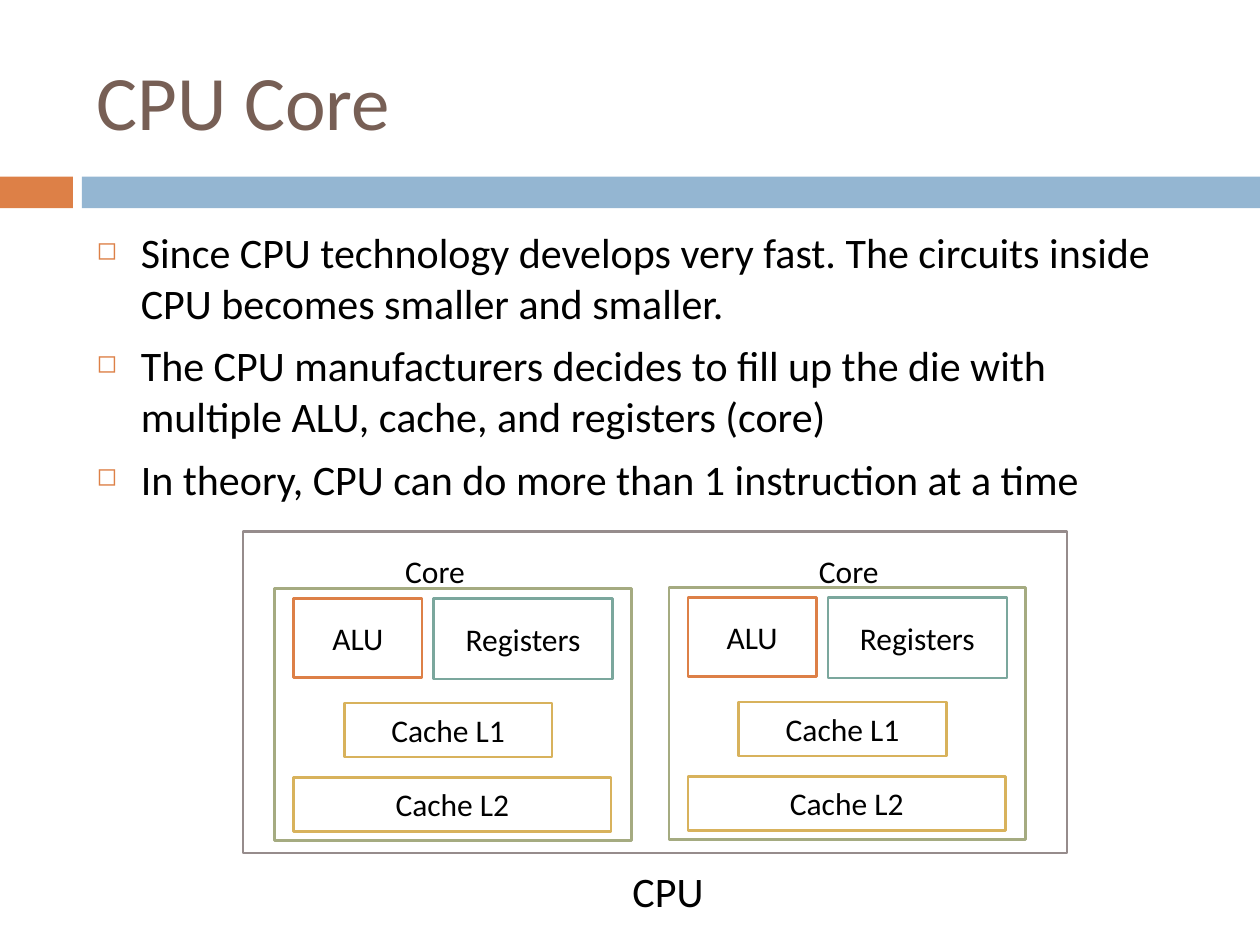
import pptx
import pptx.util
import pptx.dml.color
import pptx.enum.shapes
import pptx.enum.text
import pptx.oxml
import pptx.oxml.ns

Cm, Pt = pptx.util.Cm, pptx.util.Pt
RGBColor = pptx.dml.color.RGBColor
ALIGN = pptx.enum.text.PP_ALIGN
ANCHOR = pptx.enum.text.MSO_ANCHOR

BLACK = RGBColor(0x00, 0x00, 0x00)
WHITE = RGBColor(0xFF, 0xFF, 0xFF)
BROWN = RGBColor(0x77, 0x5F, 0x55)
ORANGE = RGBColor(0xDD, 0x80, 0x47)
BLUE = RGBColor(0x94, 0xB6, 0xD2)
GRAY = RGBColor(0x96, 0x8C, 0x8C)
TEAL = RGBColor(0x7B, 0xA7, 0x9D)
GOLD = RGBColor(0xD8, 0xB2, 0x5C)
GREEN = RGBColor(0xA5, 0xAB, 0x81)

BULLETS = [
    "Since CPU technology develops very fast. The circuits inside CPU becomes smaller and smaller.",
    "The CPU manufacturers decides to fill up the die with multiple ALU, cache, and registers (core)",
    "In theory, CPU can do more than 1 instruction at a time",
]
CORE_PARTS = [
    ("ALU", ORANGE, (0.38, 0.2, 2.59, 1.6)),
    ("Registers", TEAL, (3.2, 0.2, 3.61, 1.63)),
    ("Cache L1", GOLD, (1.4, 2.31, 4.19, 1.09)),
    ("Cache L2", GOLD, (0.38, 3.81, 6.4, 1.09)),
]
BOX_FORMAT = {"word_wrap": True, "vertical_anchor": ANCHOR.MIDDLE}
LABEL_FORMAT = {"word_wrap": False, "auto_size": pptx.enum.text.MSO_AUTO_SIZE.SHAPE_TO_FIT_TEXT}


def apply_format(obj, values):
    """Set each attribute of an object from a dict."""
    for name, value in values.items():
        setattr(obj, name, value)


def write(p, text, size, color=BLACK):
    """Add one Calibri run to a paragraph."""
    r = p.add_run()
    r.text = text
    apply_format(r.font, {"name": "Calibri", "size": Pt(size)})
    r.font.color.rgb = color


def add_rect(s, box, fill=None, line=None, text=None):
    """Add a rectangle with optional fill, outline and centred text."""
    sp = s.shapes.add_shape(pptx.enum.shapes.MSO_SHAPE.RECTANGLE, *map(Cm, box))
    sp.shadow.inherit = False
    if fill is None:
        sp.fill.background()
    else:
        sp.fill.solid()
        sp.fill.fore_color.rgb = fill
    if line is None:
        sp.line.fill.background()
    else:
        sp.line.color.rgb = line
        sp.line.width = Pt(1.5)
    if text:
        apply_format(sp.text_frame, BOX_FORMAT)
        p = sp.text_frame.paragraphs[0]
        p.alignment = ALIGN.CENTER
        write(p, text, 18)


def add_text(s, box, text, size, values, color=BLACK):
    """Add a one-line text box."""
    tf = s.shapes.add_textbox(*map(Cm, box)).text_frame
    apply_format(tf, values)
    write(tf.paragraphs[0], text, size, color)


def add_bullet(p):
    """Give a paragraph a hanging orange square bullet."""
    pPr = p._p.get_or_add_pPr()
    pPr.set("marL", str(Cm(0.89)))
    pPr.set("indent", str(-Cm(0.89)))
    ns = pptx.oxml.ns.nsdecls("a")
    for xml in (
        f'<a:buClr {ns}><a:srgbClr val="{ORANGE}"/></a:buClr>',
        f'<a:buSzPct {ns} val="60000"/>',
        f'<a:buChar {ns} char="◻"/>',
    ):
        pPr.append(pptx.oxml.parse_xml(xml))


def add_bullets(s, box, items):
    """Add the bulleted body text."""
    tf = s.shapes.add_textbox(*map(Cm, box)).text_frame
    tf.word_wrap = True
    for i, item in enumerate(items):
        p = tf.add_paragraph() if i else tf.paragraphs[0]
        p.space_before = Pt(7)
        add_bullet(p)
        write(p, item, 24)


def add_core(s, left, top, label_left):
    """Add one core with its parts, frame and label."""
    for text, color, (x, y, w, h) in CORE_PARTS:
        add_rect(s, (left + x, top + y, w, h), WHITE, color, text)
    add_rect(s, (left, top, 7.19, 5.08), line=GREEN)
    add_text(s, (label_left, 11, 1.75, 1.02), "Core", 18, LABEL_FORMAT)


def main():
    """Build the slide and save it."""
    prs = pptx.Presentation()
    apply_format(prs, {"slide_width": Cm(25.4), "slide_height": Cm(19.05)})
    s = prs.slides.add_slide(prs.slide_layouts[6])
    add_rect(s, (0, 3.56, 1.47, 0.64), ORANGE)
    add_rect(s, (1.65, 3.56, 23.75, 0.64), BLUE)
    add_text(s, (1.7, 0.64, 22.66, 2.74), "CPU Core", 44, BOX_FORMAT, BROWN)
    add_bullets(s, (1.7, 4.45, 22.66, 12.5), BULLETS)
    add_rect(s, (4.9, 10.72, 16.61, 6.48), WHITE, GRAY)
    add_text(s, (12.5, 17.32, 1.98, 1.27), "CPU", 24, LABEL_FORMAT)
    add_core(s, 5.54, 11.86, 7.92)
    add_core(s, 13.49, 11.84, 16.26)
    prs.save("out.pptx")


if __name__ == "__main__":
    main()
